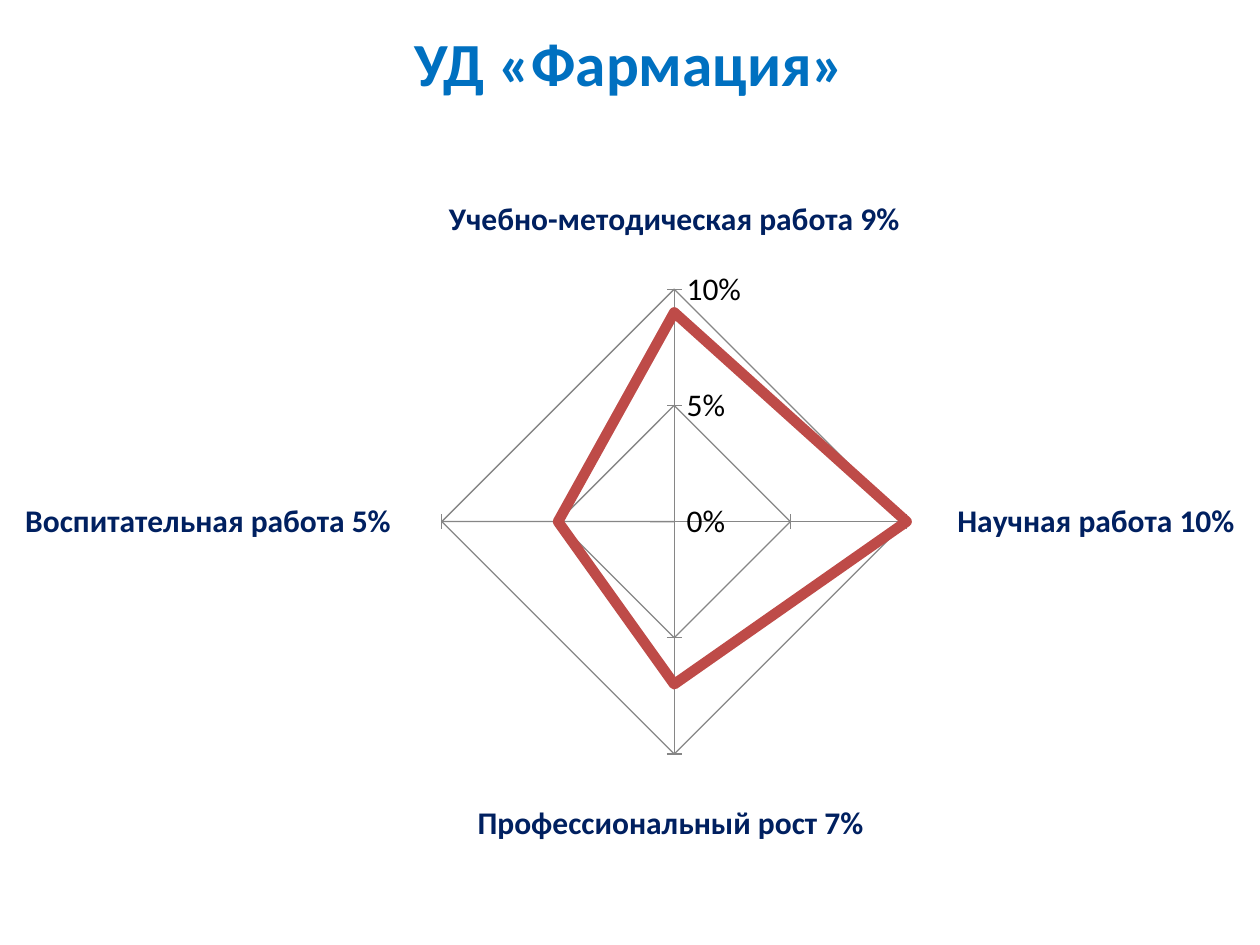
from pptx import Presentation
from pptx.chart.data import CategoryChartData
from pptx.dml.color import RGBColor
from pptx.enum.chart import XL_CHART_TYPE, XL_TICK_MARK
from pptx.enum.text import MSO_ANCHOR, PP_ALIGN
from pptx.util import Inches, Pt
from dataclasses import dataclass

RADAR = XL_CHART_TYPE.RADAR
CROSS = XL_TICK_MARK.CROSS
MIDDLE = MSO_ANCHOR.MIDDLE
CENTER = PP_ALIGN.CENTER

FONT = "Calibri"
BLUE = RGBColor(0x00, 0x70, 0xC0)
NAVY = RGBColor(0x00, 0x20, 0x60)
BLACK = RGBColor(0x00, 0x00, 0x00)
GRAY = RGBColor(0x86, 0x86, 0x86)
RED = RGBColor(0xBE, 0x4B, 0x48)


@dataclass
class Activity:
    label: str
    share: float


ACTIVITIES = [
    Activity("Учебно-методическая работа 9%", 0.09),
    Activity("Научная работа 10%", 0.10),
    Activity("Профессиональный рост 7% ", 0.07),
    Activity("Воспитательная работа 5%", 0.05),
]


def style_font(font, size: float, color: RGBColor, bold: bool = False) -> None:
    font.name = FONT
    font.size = Pt(size)
    font.bold = bold
    font.color.rgb = color


def style_axis(axis, color: RGBColor, bold: bool) -> None:
    axis.has_major_gridlines = True
    axis.major_tick_mark = CROSS
    for line in (axis.format.line, axis.major_gridlines.format.line):
        line.color.rgb = GRAY
        line.width = Pt(0.75)
    style_font(axis.tick_labels.font, 18, color, bold)


def add_title(slide, text: str) -> None:
    box = slide.shapes.add_textbox(Inches(0.5), 0, Inches(9), Inches(0.99))
    tf = box.text_frame
    tf.word_wrap = True
    tf.vertical_anchor = MIDDLE
    p = tf.paragraphs[0]
    p.text = text
    p.alignment = CENTER
    style_font(p.runs[0].font, 35, BLUE, True)


def add_radar(slide, activities: list[Activity]) -> None:
    data = CategoryChartData(number_format="0%")
    data.categories = [a.label for a in activities]
    data.add_series("Series 1", [a.share for a in activities])
    chart = slide.shapes.add_chart(
        RADAR, 0, Inches(0.99), Inches(10), Inches(6.3), data
    ).chart
    chart.has_legend = False
    chart.has_title = False
    style_font(chart.font, 18, BLACK)

    style_axis(chart.category_axis, NAVY, True)
    value_axis = chart.value_axis
    style_axis(value_axis, BLACK, False)
    value_axis.minimum_scale = 0
    value_axis.maximum_scale = 0.1
    value_axis.major_unit = 0.05
    value_axis.tick_labels.number_format = "0%"
    value_axis.tick_labels.number_format_is_linked = False

    series = chart.plots[0].series[0]
    series.smooth = False
    series.format.line.color.rgb = RED
    series.format.line.width = Pt(6)


def main() -> None:
    prs = Presentation()
    prs.slide_width = Inches(10)
    prs.slide_height = Inches(7.5)
    slide = prs.slides.add_slide(prs.slide_layouts[6])
    add_title(slide, "УД «Фармация»")
    add_radar(slide, ACTIVITIES)
    prs.save("out.pptx")


if __name__ == "__main__":
    main()
